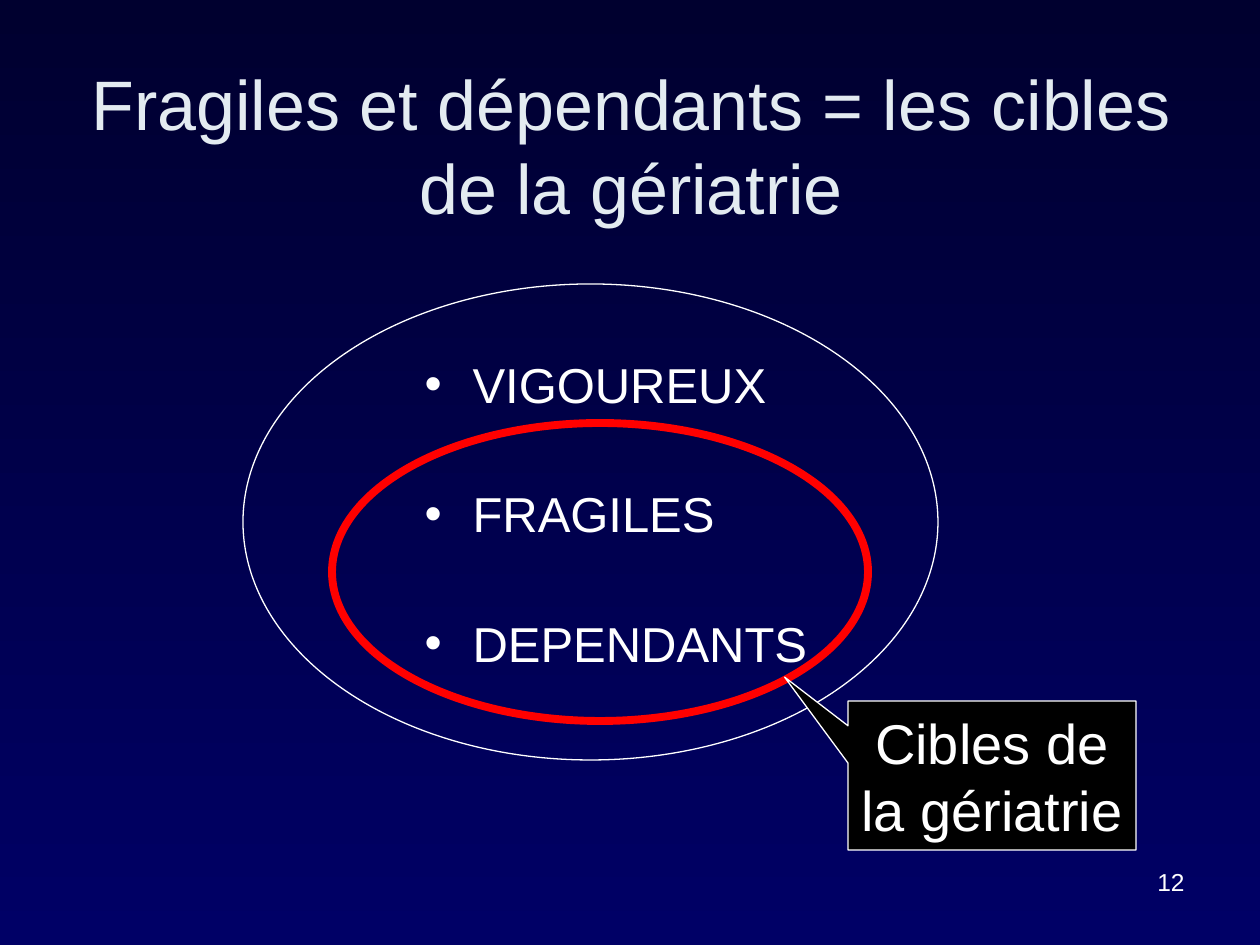
"""Build the slide showing frail and dependent people as the targets of geriatrics."""
from dataclasses import dataclass

from pptx import Presentation
from pptx.dml.color import RGBColor
from pptx.enum.shapes import MSO_SHAPE
from pptx.enum.text import MSO_ANCHOR, MSO_AUTO_SIZE, PP_ALIGN
from pptx.oxml.ns import qn
from pptx.util import Emu, Pt

CENTER, LEFT, RIGHT = PP_ALIGN.CENTER, PP_ALIGN.LEFT, PP_ALIGN.RIGHT
MIDDLE, TOP = MSO_ANCHOR.MIDDLE, MSO_ANCHOR.TOP
OVAL, CALLOUT = MSO_SHAPE.OVAL, MSO_SHAPE.RECTANGULAR_CALLOUT
PX = 914400 / 126


@dataclass(frozen=True)
class Theme:
    font: str = "Arial"
    sky: str = "00002F"
    base: str = "000066"
    title: str = "E3EBF1"
    text: str = "FFFFFF"
    accent: str = "FF0000"
    label: str = "000000"
    title_pt: int = 40
    body_pt: int = 28
    label_pt: int = 32
    number_pt: int = 14
    thin: float = 0.75
    thick: float = 4.5


T = Theme()
TITLE = "Fragiles et dépendants = les cibles de la gériatrie"
GROUPS = ["VIGOUREUX", "FRAGILES", "DEPENDANTS"]
TARGET = "Cibles de la gériatrie"
NUMBER = "12"

SLIDE = (1260, 945)
TITLE_BOX = (64, 66, 1134, 158)
BODY_BOX = (412, 348, 517, 461)
POPULATION = (243, 284, 695, 476)
TARGET_RING = (332, 423, 536, 298)
TARGET_LABEL = (848, 701, 288, 149)
NUMBER_BOX = (903, 861, 294, 65)
POINTER = (-0.72, -0.66)
INDENT = 48
GROUP_GAP = Pt(40.4)


def px(n):
    return Emu(round(n * PX))


def rgb(color):
    return RGBColor.from_string(color)


def place(sp, box):
    sp.left, sp.top, sp.width, sp.height = map(px, box)


def write(sp, lines, size, color, align, anchor):
    tf = sp.text_frame
    tf.word_wrap = True
    tf.auto_size = MSO_AUTO_SIZE.NONE
    tf.vertical_anchor = anchor
    tf.text = "\n".join(lines)
    for p in tf.paragraphs:
        p.alignment = align
        p.space_before = Pt(0)
        p.font.name = T.font
        p.font.size = Pt(size)
        p.font.color.rgb = rgb(color)
    return tf


def outlined(s, kind, box, color, width, fill=None):
    sp = s.shapes.add_shape(kind, *map(px, box))
    sp.shadow.inherit = False
    sp.line.color.rgb = rgb(color)
    sp.line.width = Pt(width)
    if fill:
        sp.fill.solid()
        sp.fill.fore_color.rgb = rgb(fill)
    else:
        sp.fill.background()
    return sp


def bullet(p):
    pPr = p._p.get_or_add_pPr()
    pPr.set("marL", str(px(INDENT)))
    pPr.set("indent", str(-px(INDENT)))
    char = pPr.makeelement(qn("a:buChar"), {"char": "•"})
    pPr.find(qn("a:defRPr")).addprevious(char)


def paint_background(s):
    fill = s.background.fill
    fill.gradient()
    fill.gradient_angle = 270
    for stop, color in zip(fill.gradient_stops, (T.sky, T.base)):
        stop.color.rgb = rgb(color)


def main():
    prs = Presentation()
    prs.slide_width, prs.slide_height = map(px, SLIDE)
    s = prs.slides.add_slide(prs.slide_layouts[1])
    paint_background(s)

    title, body = s.placeholders
    place(title, TITLE_BOX)
    write(title, [TITLE], T.title_pt, T.title, CENTER, MIDDLE)
    place(body, BODY_BOX)
    for p in write(body, GROUPS, T.body_pt, T.text, LEFT, TOP).paragraphs:
        p.space_after = GROUP_GAP
        bullet(p)

    outlined(s, OVAL, POPULATION, T.text, T.thin)
    outlined(s, OVAL, TARGET_RING, T.accent, T.thick)
    label = outlined(s, CALLOUT, TARGET_LABEL, T.text, T.thin, T.label)
    label.adjustments[0], label.adjustments[1] = POINTER
    tf = write(label, [TARGET], T.label_pt, T.text, CENTER, MIDDLE)
    tf.margin_left = tf.margin_right = px(10)

    number = s.shapes.add_textbox(*map(px, NUMBER_BOX))
    write(number, [NUMBER], T.number_pt, T.text, RIGHT, TOP)
    prs.save("out.pptx")


if __name__ == "__main__":
    main()
